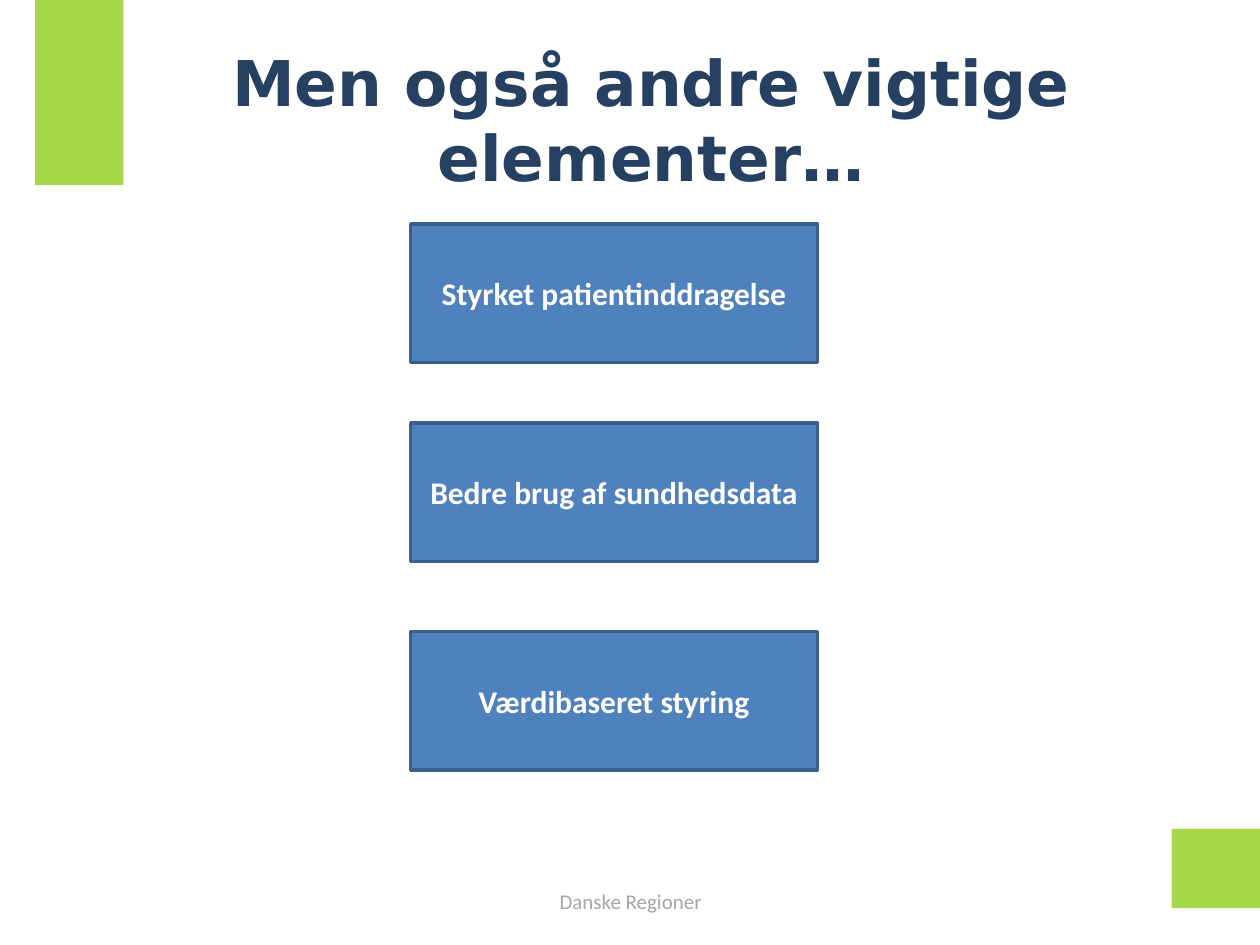
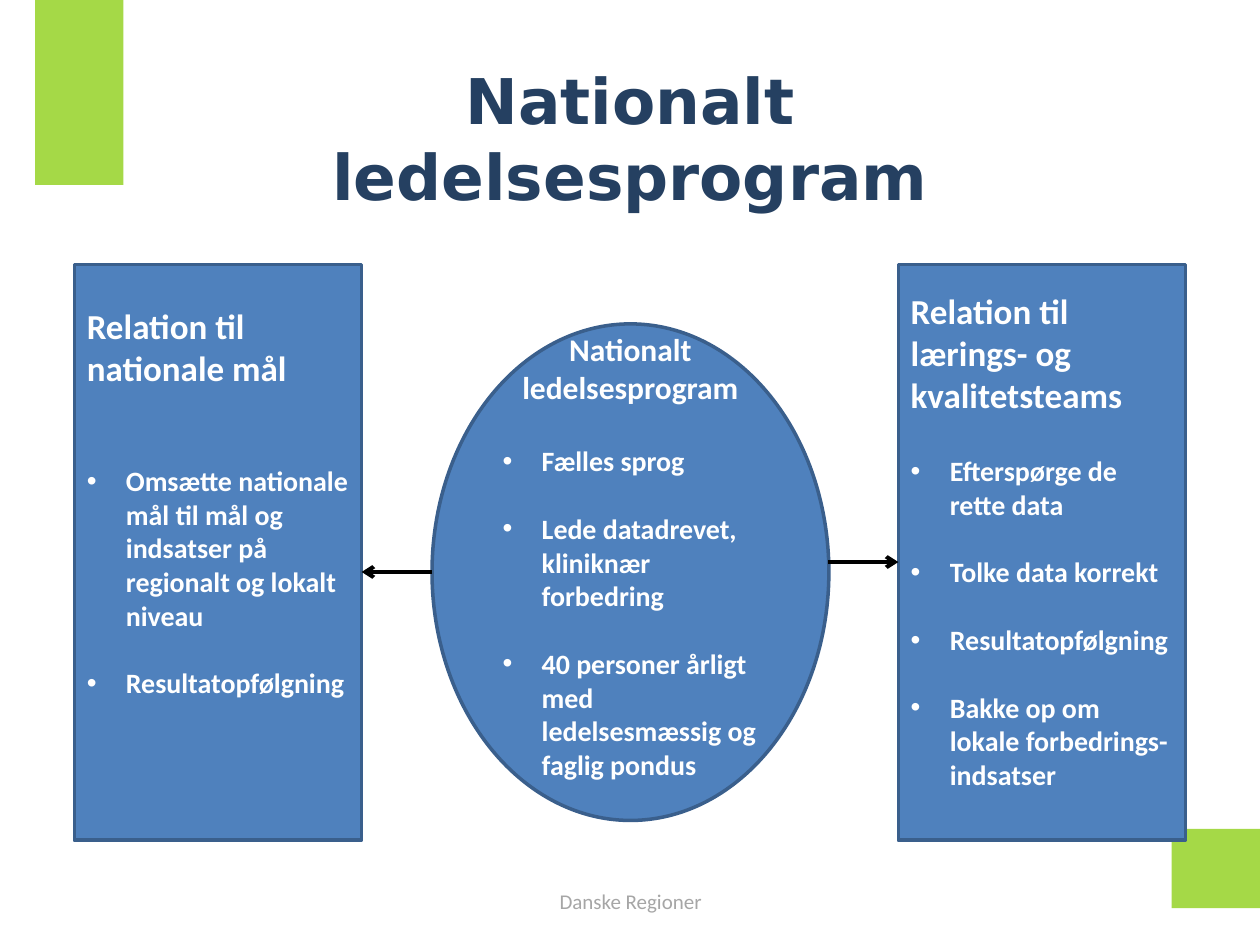
from dataclasses import dataclass

from lxml import etree
from pptx import Presentation
from pptx import util as u
from pptx.dml.color import RGBColor
from pptx.enum import shapes, text
from pptx.oxml.ns import qn

RECT = shapes.MSO_SHAPE.RECTANGLE
OVAL = shapes.MSO_SHAPE.OVAL
LEFT, CENTER = text.PP_ALIGN.LEFT, text.PP_ALIGN.CENTER
TOP, MIDDLE = text.MSO_ANCHOR.TOP, text.MSO_ANCHOR.MIDDLE


@dataclass(frozen=True)
class Theme:
    green: str = "A5D947"
    navy: str = "254061"
    blue: str = "4F81BD"
    edge: str = "3A5F8C"
    grey: str = "A6A6A6"
    white: str = "FFFFFF"
    black: str = "000000"
    title_font: str = "DejaVu Sans"
    body_font: str = "Calibri"
    title_size: float = 36
    panel_size: float = 20
    box_size: float = 18
    bullet_size: float = 16
    footer_size: float = 12
    edge_width: float = 2
    arrow_width: float = 2.25
    bullet_gap: float = 19.5


T = Theme()


def cm(*values):
    return [u.Cm(v) for v in values]


def style(p, size, color, bold=True, font=T.body_font, align=CENTER):
    p.alignment = align
    for r in p.runs:
        r.font.name, r.font.size, r.font.bold = font, u.Pt(size), bold
        r.font.color.rgb = RGBColor.from_string(color)


def add_block(s, kind, at, fill, edge=None):
    sp = s.shapes.add_shape(kind, *cm(*at))
    sp.shadow.inherit = False
    sp.fill.solid()
    sp.fill.fore_color.rgb = RGBColor.from_string(fill)
    if edge:
        sp.line.color.rgb = RGBColor.from_string(edge)
        sp.line.width = u.Pt(T.edge_width)
    else:
        sp.line.fill.background()
    return sp


def add_bands(prs, s):
    """Place the green bands on the master, behind its placeholders."""
    tree = prs.slide_master.shapes.element
    for at in ((0.71, 0, 1.78, 3.73), (23.62, 16.71, 1.78, 1.6)):
        tree.insert(2, add_block(s, RECT, at, T.green).element)


def add_title(s, title, left, top):
    sp = s.shapes.title
    sp.left, sp.top, sp.width, sp.height = cm(left, top, 18.08, 2.59)
    tf = sp.text_frame
    tf.text = title
    tf.auto_size = text.MSO_AUTO_SIZE.NONE
    tf.vertical_anchor = TOP
    style(tf.paragraphs[0], T.title_size, T.navy, font=T.title_font)


def add_footer(s):
    tf = s.shapes.add_textbox(*cm(8.69, 17.65, 8.05, 1.02)).text_frame
    tf.word_wrap = True
    tf.vertical_anchor = MIDDLE
    tf.text = "Danske Regioner"
    style(tf.paragraphs[0], T.footer_size, T.grey, bold=False)


def new_slide(prs, title, left, top):
    s = prs.slides.add_slide(prs.slide_layouts[5])
    add_title(s, title, left, top)
    add_footer(s)
    return s


def add_bullet(tf, item, gap):
    p = tf.add_paragraph()
    p.text = item
    pPr = p._p.get_or_add_pPr()
    indent = u.Cm(0.79)
    pPr.set("marL", str(indent))
    pPr.set("indent", str(-indent))
    etree.SubElement(pPr, qn("a:buFont")).set("typeface", "Arial")
    etree.SubElement(pPr, qn("a:buChar")).set("char", "•")
    p.space_before = u.Pt(gap)
    style(p, T.bullet_size, T.white, align=LEFT)


def add_box(s, kind, at, heading, size, bullets=(), first_gap=22,
            align=CENTER, anchor=MIDDLE, inset_top=0.13, inset_bottom=0.13):
    tf = add_block(s, kind, at, T.blue, T.edge).text_frame
    tf.word_wrap = True
    tf.vertical_anchor = anchor
    tf.margin_top, tf.margin_bottom = cm(inset_top, inset_bottom)
    tf.text = heading
    style(tf.paragraphs[0], size, T.white, align=align)
    for i, item in enumerate(bullets):
        add_bullet(tf, item, T.bullet_gap if i else first_gap)


def add_panel(s, left, heading, bullets, first_gap, inset_top):
    add_box(s, RECT, (left, 5.33, 5.79, 11.61), heading, T.panel_size, bullets,
            first_gap, align=LEFT, anchor=TOP, inset_top=inset_top)


def add_arrow(s, x1, x2, y):
    c = s.shapes.add_connector(shapes.MSO_CONNECTOR.STRAIGHT, *cm(x1, y, x2, y))
    c.line.color.rgb = RGBColor.from_string(T.black)
    c.line.width = u.Pt(T.arrow_width)
    etree.SubElement(c.line._get_or_add_ln(), qn("a:tailEnd")).set("type", "arrow")
    etree.SubElement(c.element.spPr, qn("a:effectLst"))


def main():
    prs = Presentation()
    prs.slide_width, prs.slide_height = cm(25.4, 19.05)

    # Slide 1: three further elements
    s = new_slide(prs, "Men også andre vigtige elementer…", 4.09, 0.74)
    add_bands(prs, s)
    elements = (
        (4.52, "Styrket patientinddragelse"),
        (8.53, "Bedre brug af sundhedsdata"),
        (12.73, "Værdibaseret styring"),
    )
    for top, label in elements:
        add_box(s, RECT, (8.28, top, 8.2, 2.79), label, T.box_size)

    # Slide 2: the programme and its two relations
    s = new_slide(prs, "Nationalt ledelsesprogram", 3.66, 1.12)
    add_panel(s, 1.5, "Relation til nationale mål", (
        "Omsætte nationale mål til mål og indsatser på regionalt og lokalt niveau",
        "Resultatopfølgning",
    ), first_gap=43, inset_top=0.81)
    add_panel(s, 18.11, "Relation til lærings- og kvalitetsteams", (
        "Efterspørge de rette data",
        "Tolke data korrekt",
        "Resultatopfølgning",
        "Bakke op om lokale forbedrings-indsatser",
    ), first_gap=22, inset_top=0.5)
    add_box(s, OVAL, (8.71, 6.53, 8, 10.01), "Nationalt ledelsesprogram", T.box_size, (
        "Fælles sprog",
        "Lede datadrevet, kliniknær forbedring",
        "40 personer årligt med ledelsesmæssig og faglig pondus",
    ), inset_bottom=0.81)

    # Arrows from the programme to each panel
    add_arrow(s, 16.69, 18.11, 11.33)
    add_arrow(s, 8.71, 7.29, 11.53)

    prs.save("out.pptx")


if __name__ == "__main__":
    main()
